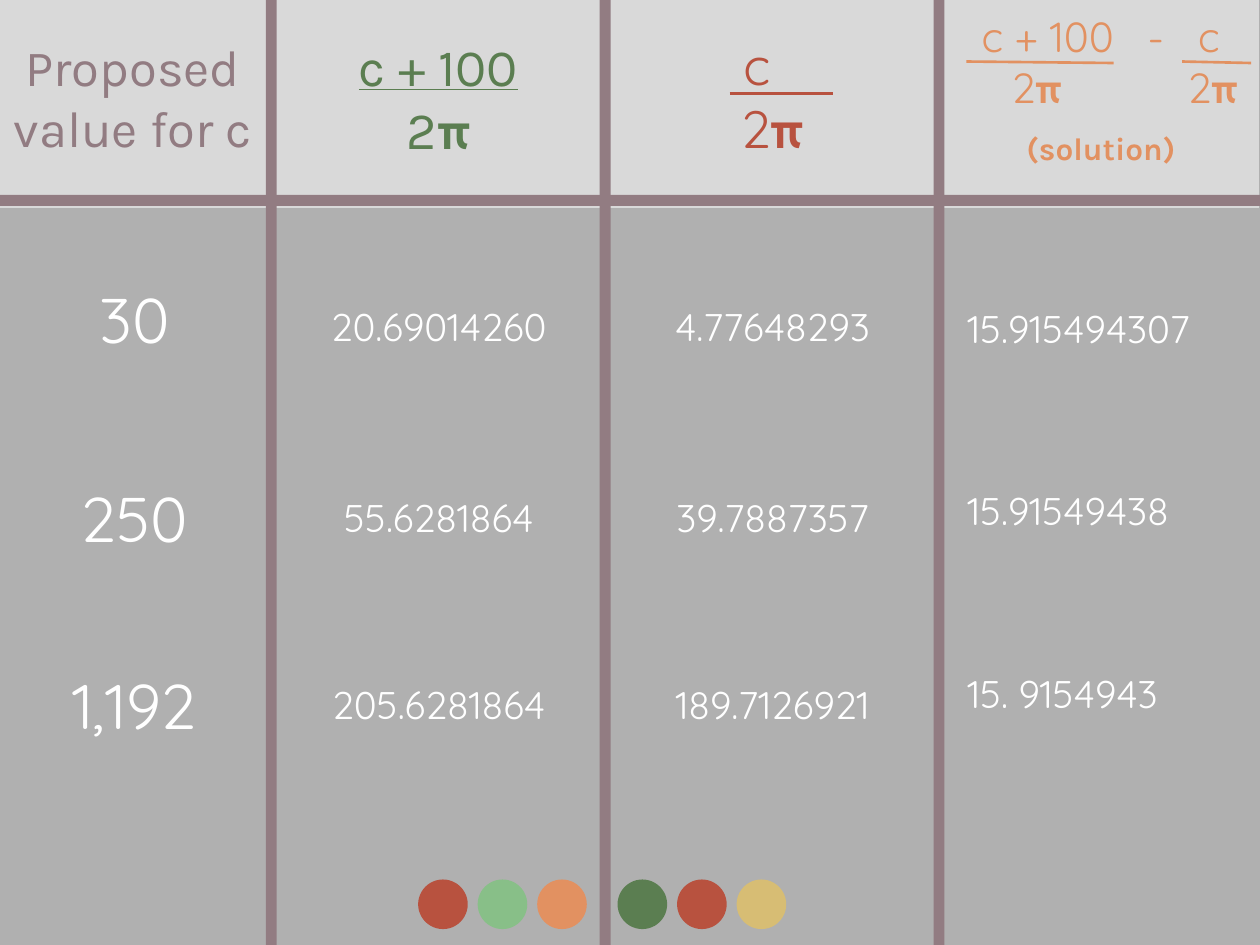
from dataclasses import dataclass

from lxml.etree import SubElement
from pptx import Presentation
from pptx.dml.color import RGBColor
from pptx.enum.shapes import MSO_CONNECTOR as Link, MSO_SHAPE as Form
from pptx.enum.text import MSO_ANCHOR as Anchor, PP_ALIGN as Align
from pptx.oxml.ns import qn
from pptx.util import Cm, Pt

HUES = {
    "ground": "B0B0B0", "head": "D9D9D9", "mauve": "927C82", "white": "FFFFFF",
    "red": "B8523F", "orange": "E29161", "gold": "D7BD74",
    "mint": "88BF88", "green": "5B7E51",
}
KARLA, QUICK = "Karla", "Quicksand"


@dataclass
class Box:
    left: float
    top: float
    width: float
    height: float

    def place(self) -> tuple:
        return Cm(self.left), Cm(self.top), Cm(self.width), Cm(self.height)


@dataclass
class Para:
    text: str
    size: float
    hue: str
    font: str = QUICK
    bold: bool = False
    under: bool = False
    align: Align = Align.CENTER
    before: float = 0
    tabs: tuple = ()


@dataclass
class Rule:
    start: float
    end: float
    top: float
    drop: float
    hue: str


def tint(name: str) -> RGBColor:
    return RGBColor.from_string(HUES[name])


def add_form(slide, form: Form, box: Box, hue: str) -> None:
    shape = slide.shapes.add_shape(form, *box.place())
    shape.shadow.inherit = False
    shape.fill.solid()
    shape.fill.fore_color.rgb = tint(hue)
    shape.line.fill.background()


def add_rule(slide, rule: Rule) -> None:
    line = slide.shapes.add_connector(
        Link.STRAIGHT, Cm(rule.start), Cm(rule.top),
        Cm(rule.end), Cm(rule.top + rule.drop))
    line.line.color.rgb = tint(rule.hue)
    line.line.width = Pt(1.5)
    SubElement(line.element.spPr, qn("a:effectLst"))


def add_para(para, item: Para) -> None:
    """Fill one paragraph; every π is set in bold Karla."""
    para.alignment = Align.LEFT if item.tabs else item.align
    if item.before:
        para.space_before = Pt(item.before)
    if item.tabs:
        stops = SubElement(para._p.get_or_add_pPr(), qn("a:tabLst"))
        for stop in item.tabs:
            SubElement(stops, qn("a:tab"), pos=str(Cm(stop)), algn="ctr")
    font = para.font
    font.name, font.size, font.color.rgb = item.font, Pt(item.size), tint(item.hue)
    font.bold, font.underline = item.bold, item.under
    for piece in item.text.replace("π", "|π|").split("|"):
        if piece:
            run = para.add_run()
            run.text = piece
            if piece == "π":
                run.font.name, run.font.bold = KARLA, True


def add_text(slide, box: Box, items: list[Para], anchor: Anchor = Anchor.MIDDLE) -> None:
    frame = slide.shapes.add_textbox(*box.place()).text_frame
    frame.word_wrap = True
    frame.vertical_anchor = anchor
    frame.margin_left = frame.margin_right = Cm(0.25)
    frame.margin_top = frame.margin_bottom = Cm(0.25)
    for spot, item in enumerate(items):
        add_para(frame.add_paragraph() if spot else frame.paragraphs[0], item)


STEP = 6.73  # from one column to the next
BARS = [5.36 + STEP * spot for spot in range(3)]
DOTS = {8.43: ("red", "mint", "orange"), 12.45: ("green", "red", "gold")}
RULES = [
    Rule(14.71, 16.79, 1.88, 0, "red"),
    Rule(19.48, 22.45, 1.24, 0.03, "orange"),
    Rule(23.83, 25.22, 1.24, 0.03, "orange"),
]
HEADS = [
    (Box(0, -0.03, 5.36, 3.96), Anchor.MIDDLE,
     [Para("Proposed value for c", 29, "mauve", KARLA)]),
    (Box(5.59, -0.03, 6.5, 3.96), Anchor.MIDDLE,
     [Para("c + 100", 30, "green", KARLA, under=True),
      Para("2π", 30, "green", KARLA)]),
    (Box(5.59 + STEP, -0.05, 6.5, 3.96), Anchor.MIDDLE,
     [Para("\tc", 30, "red", tabs=(2.69,)), Para("2π", 30, "red")]),
    (Box(19.02, -0.03, 6.35, 3.96), Anchor.TOP,
     [Para("\tc + 100\t-\tc", 24, "orange", tabs=(1.85, 4.03, 5.1)),
      Para("\t2π\t2π", 24, "orange", tabs=(1.63, 5.18)),
      Para("(solution)", 18, "orange", KARLA, bold=True, before=10)]),
]
ROWS = [8.64, 12.4]
COLS = [
    (0.36, 4.7, 36, [4.62, *ROWS], ["30", "250", "1,192"]),
    (5.82, 6.05, 22, [4.78, *ROWS], ["20.69014260", "55.6281864", "205.6281864"]),
    (5.82 + STEP, 6.05, 22, [4.78, *ROWS], ["4.77648293", "39.7887357", "189.7126921"]),
]
SUMS = ["15.915494307", "15.91549438", "15. 9154943"]


def main() -> None:
    deck = Presentation()
    deck.slide_width, deck.slide_height = Cm(25.4), Cm(19.05)
    slide = deck.slides.add_slide(deck.slide_layouts[6])
    slide.background.fill.solid()
    slide.background.fill.fore_color.rgb = tint("ground")

    add_form(slide, Form.RECTANGLE, Box(0, -0.05, 25.38, 4.24), "head")
    for left, hues in DOTS.items():
        for spot, hue in enumerate(hues):
            add_form(slide, Form.OVAL, Box(left + 1.2 * spot, 17.73, 1, 1), hue)
    add_form(slide, Form.RECTANGLE, Box(-0.1, 3.93, 25.53, 0.22), "mauve")
    for left in BARS:
        add_form(slide, Form.RECTANGLE, Box(left, -0.03, 0.22, 19.1), "mauve")

    for box, anchor, items in HEADS:
        add_text(slide, box, items, anchor)
    for left, width, size, tops, values in COLS:
        for top, value in zip(tops, values):
            add_text(slide, Box(left, top, width, 3.58), [Para(value, size, "white")])
    add_text(slide, Box(19.25, 5.89, 6.05, 9.78),
             [Para(value, 22, "white", align=Align.LEFT, before=78 if spot else 0)
              for spot, value in enumerate(SUMS)], Anchor.TOP)
    for rule in RULES:
        add_rule(slide, rule)
    deck.save("out.pptx")


if __name__ == "__main__":
    main()
